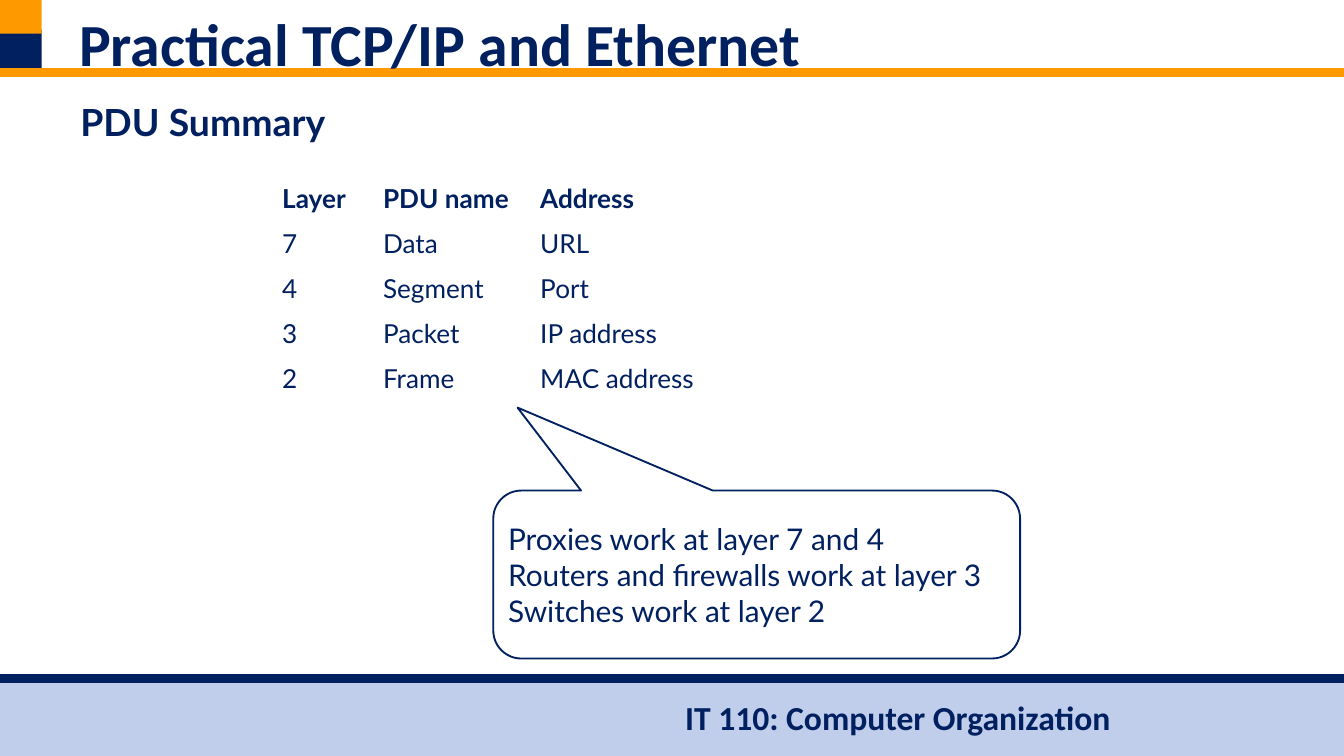
from lxml import etree
from pptx import Presentation
from pptx.dml.color import RGBColor
from pptx.enum.shapes import MSO_CONNECTOR, MSO_SHAPE
from pptx.enum.text import MSO_ANCHOR, PP_ALIGN
from pptx.oxml.ns import qn
from pptx.util import Inches, Pt

RECTANGLE = MSO_SHAPE.RECTANGLE
CALLOUT = MSO_SHAPE.ROUNDED_RECTANGULAR_CALLOUT
STRAIGHT = MSO_CONNECTOR.STRAIGHT
MIDDLE = MSO_ANCHOR.MIDDLE
LEFT = PP_ALIGN.LEFT

COLORS = {
    name: RGBColor.from_string(value)
    for name, value in {
        "navy": "002060",
        "orange": "FF9900",
        "pale": "C0CDEB",
        "white": "FFFFFF",
    }.items()
}

deck = Presentation()
deck.slide_width = Inches(10)
deck.slide_height = Inches(5.625)
slide = deck.slides.add_slide(deck.slide_layouts[6])
shapes = slide.shapes

# Square grid: 100 columns across the slide, 56.25 rows down
COLUMNS, ROWS = 100, 56.25
UNIT = deck.slide_width / COLUMNS


def grid(*counts):
    return [round(count * UNIT) for count in counts]


def style(para, font, size, bold=False):
    para.alignment = LEFT
    para.font.name = font
    para.font.size = Pt(size)
    para.font.bold = bold
    para.font.color.rgb = COLORS["navy"]


# Footer band and corner blocks
for area, color in [
    ((0, 50.6, COLUMNS, ROWS - 50.6), "pale"),
    ((0, 2.2, 3.1, 3.2), "navy"),
    ((0, 0, 3.1, 2.5), "orange"),
]:
    block = shapes.add_shape(RECTANGLE, *grid(*area))
    block.shadow.inherit = False
    block.fill.solid()
    block.fill.fore_color.rgb = COLORS[color]
    block.line.fill.background()

# Rules under the title and above the footer
for row, color in [(5.4, "orange"), (50.5, "navy")]:
    rule = shapes.add_connector(STRAIGHT, *grid(0, row, COLUMNS, row))
    rule.line.color.rgb = COLORS[color]
    rule.line.width = Pt(4.5)
    etree.SubElement(rule._element.spPr, qn("a:effectLst"))

# Title, heading and footer text
for text, area, font, size in [
    ("IT 110: Computer Organization", (50, 51.4, 33.9, 4), "Calibri", 18),
    ("PDU Summary", (5, 6.9, 90, 37.1), "Lato", 20),
    ("Practical TCP/IP and Ethernet", (4.9, 0, 90.2, 5.3), "Calibri", 32),
]:
    box = shapes.add_textbox(*grid(*area))
    box.text_frame.word_wrap = True
    para = box.text_frame.paragraphs[0]
    para.text = text
    style(para, font, size, bold=True)

# Table of protocol data units
records = [
    ("Layer", "PDU name", "Address"),
    ("7", "Data", "URL"),
    ("4", "Segment", "Port"),
    ("3", "Packet", "IP address"),
    ("2", "Frame", "MAC address"),
]
widths = grid(7.5, 11.7, 15)
row_height = grid(2.7)[0]
table = shapes.add_table(
    len(records), len(widths), *grid(20, 13.1), sum(widths), row_height * len(records)
).table
for column, width in zip(table.columns, widths):
    column.width = width
for row_index, record in enumerate(records):
    table.rows[row_index].height = row_height
    for column_index, text in enumerate(record):
        cell = table.cell(row_index, column_index)
        cell.text = text
        cell.fill.solid()
        cell.fill.fore_color.rgb = COLORS["white"]
        style(cell.text_frame.paragraphs[0], "Lato", 14, bold=row_index == 0)

# Callout pointing at the table
callout = shapes.add_shape(CALLOUT, *grid(36.7, 36.5, 39.2, 12.5))
callout.shadow.inherit = False
callout.adjustments[0] = -0.454
callout.adjustments[1] = -0.994
callout.adjustments[2] = 0.167
callout.fill.solid()
callout.fill.fore_color.rgb = COLORS["white"]
callout.line.color.rgb = COLORS["navy"]
callout.line.width = Pt(1)
frame = callout.text_frame
frame.word_wrap = True
frame.vertical_anchor = MIDDLE
frame.margin_left = frame.margin_right = Inches(0.05)
frame.margin_top = frame.margin_bottom = Inches(0.05)
frame.text = "\n".join([
    "Proxies work at layer 7 and 4",
    "Routers and firewalls work at layer 3",
    "Switches work at layer 2",
])
for para in frame.paragraphs:
    style(para, "Lato", 16)

deck.save("out.pptx")
